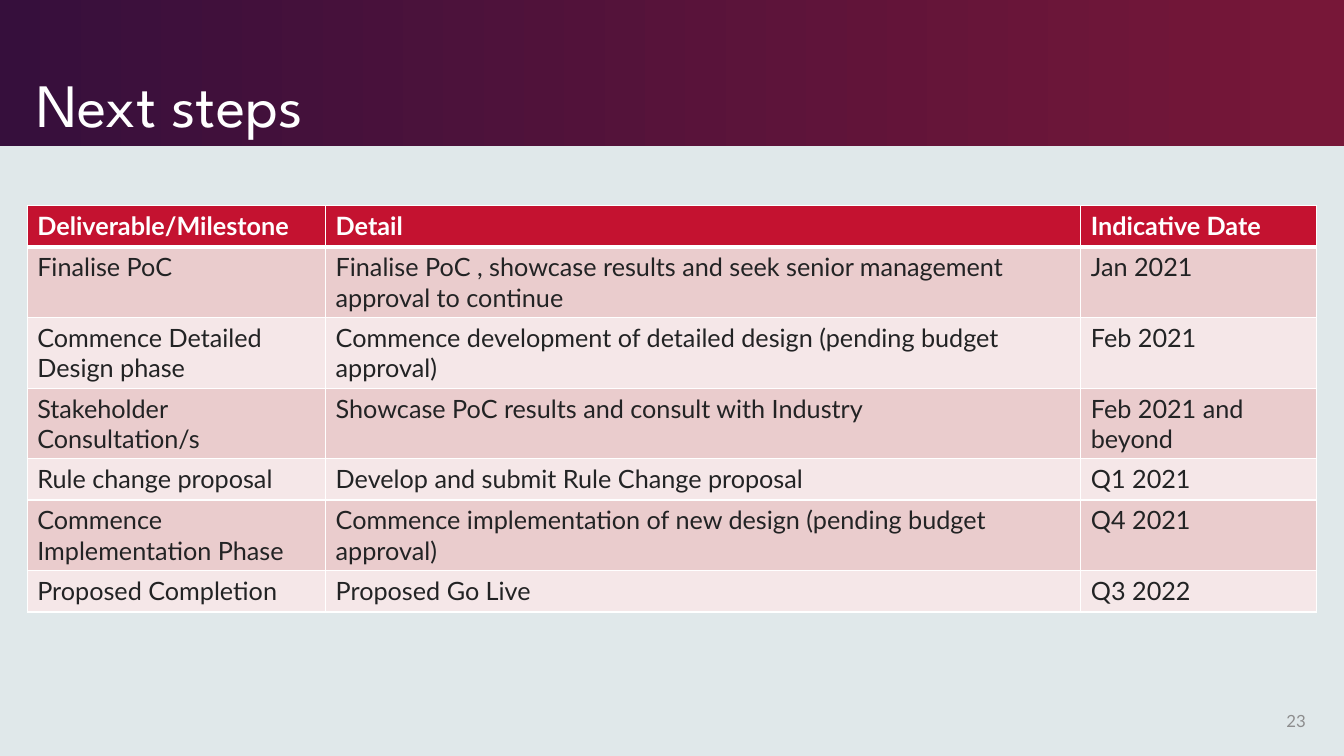
from lxml import etree
from pptx import Presentation
from pptx.dml.color import RGBColor
from pptx.enum.shapes import MSO_SHAPE
from pptx.enum.text import MSO_ANCHOR, MSO_AUTO_SIZE, PP_ALIGN
from pptx.oxml.ns import qn
from pptx.util import Inches, Pt

RECTANGLE = MSO_SHAPE.RECTANGLE
BOTTOM, MIDDLE = MSO_ANCHOR.BOTTOM, MSO_ANCHOR.MIDDLE
LEFT, RIGHT = PP_ALIGN.LEFT, PP_ALIGN.RIGHT
NO_AUTOFIT = MSO_AUTO_SIZE.NONE

BACKGROUND = RGBColor(0xE0, 0xE8, 0xEA)
PURPLE = RGBColor(0x36, 0x0F, 0x3C)
MAROON = RGBColor(0x77, 0x17, 0x38)
RED = RGBColor(0xC4, 0x12, 0x30)
DARK_BAND = RGBColor(0xEA, 0xCC, 0xCD)
LIGHT_BAND = RGBColor(0xF5, 0xE7, 0xE8)
WHITE = RGBColor(0xFF, 0xFF, 0xFF)
INK = RGBColor(0x22, 0x23, 0x24)
GREY = RGBColor(0x8D, 0x8D, 0x8E)

HEADING_FONT = "League Spartan"
BODY_FONT = "Lato"

COLUMN_WIDTHS = [2.96, 7.49, 2.34]
ROW_HEIGHT = 0.41
MILESTONES = [
    ("Deliverable/Milestone", "Detail", "Indicative Date"),
    ("Finalise PoC",
     "Finalise PoC , showcase results and seek senior management approval to continue",
     "Jan 2021"),
    ("Commence Detailed Design phase",
     "Commence development of detailed design (pending budget approval)",
     "Feb 2021"),
    ("Stakeholder Consultation/s",
     "Showcase PoC results and consult with Industry",
     "Feb 2021 and beyond"),
    ("Rule change proposal", "Develop and submit Rule Change proposal", "Q1 2021"),
    ("Commence Implementation Phase",
     "Commence implementation of new design (pending budget approval)",
     "Q4 2021"),
    ("Proposed Completion", "Proposed Go Live", "Q3 2022"),
]


def add_run(paragraph, text, size, color, font=BODY_FONT, bold=False):
    run = paragraph.add_run()
    run.text = text
    run.font.name = font
    run.font.size = Pt(size)
    run.font.bold = bold
    run.font.color.rgb = color


def add_header_band(slide, width):
    band = slide.shapes.add_shape(RECTANGLE, 0, 0, width, Inches(1.45))
    band.shadow.inherit = False
    band.line.fill.background()
    band.fill.gradient()
    band.fill.gradient_angle = 0
    stops = band.fill.gradient_stops
    for stop, color, position in zip(stops, (PURPLE, MAROON), (0, 0.99)):
        stop.color.rgb = color
        stop.position = position
    # Keep the band behind the title
    slide.shapes.title.element.addprevious(band.element)


def set_title(slide, text):
    title = slide.shapes.title
    title.left, title.top = Inches(0.26), Inches(0.15)
    title.width, title.height = Inches(9.84), Inches(1.3)
    frame = title.text_frame
    frame.auto_size = NO_AUTOFIT
    frame.vertical_anchor = BOTTOM
    paragraph = frame.paragraphs[0]
    paragraph.alignment = LEFT
    paragraph.line_spacing = 0.9
    add_run(paragraph, text, 44, WHITE, HEADING_FONT)


def set_borders(cell, widths):
    properties = cell._tc.get_or_add_tcPr()
    for side, width in widths.items():
        line = etree.SubElement(properties, qn(f"a:ln{side}"), w=str(Pt(width)))
        fill = etree.SubElement(line, qn("a:solidFill"))
        etree.SubElement(fill, qn("a:srgbClr"), val=str(WHITE))


def fill_cell(cell, text, row):
    header = row == 0
    # The rule under the header is thicker than the rest
    set_borders(cell, {"L": 1, "R": 1, "T": 3 if row == 1 else 1, "B": 3 if header else 1})
    cell.fill.solid()
    cell.fill.fore_color.rgb = RED if header else DARK_BAND if row % 2 else LIGHT_BAND
    add_run(cell.text_frame.paragraphs[0], text, 18, WHITE if header else INK, bold=header)


def add_milestone_table(slide):
    row_count, column_count = len(MILESTONES), len(COLUMN_WIDTHS)
    table = slide.shapes.add_table(
        row_count, column_count, Inches(0.27), Inches(2.04),
        Inches(sum(COLUMN_WIDTHS)), Inches(ROW_HEIGHT * row_count)).table
    for column, width in zip(table.columns, COLUMN_WIDTHS):
        column.width = Inches(width)
    for row, texts in enumerate(MILESTONES):
        for column, text in enumerate(texts):
            fill_cell(table.cell(row, column), text, row)


def add_page_number(slide, number):
    box = slide.shapes.add_textbox(Inches(12.42), Inches(6.95), Inches(0.63), Inches(0.4))
    frame = box.text_frame
    frame.word_wrap = True
    frame.vertical_anchor = MIDDLE
    paragraph = frame.paragraphs[0]
    paragraph.alignment = RIGHT
    add_run(paragraph, number, 12, GREY)


def main():
    presentation = Presentation()
    presentation.slide_width = Inches(13.33)
    presentation.slide_height = Inches(7.5)
    title_only = presentation.slide_layouts.get_by_name("Title Only")
    slide = presentation.slides.add_slide(title_only)
    slide.background.fill.solid()
    slide.background.fill.fore_color.rgb = BACKGROUND

    # Header
    add_header_band(slide, presentation.slide_width)
    set_title(slide, "Next steps")

    # Body and footer
    add_milestone_table(slide)
    add_page_number(slide, "23")
    presentation.save("out.pptx")


if __name__ == "__main__":
    main()
